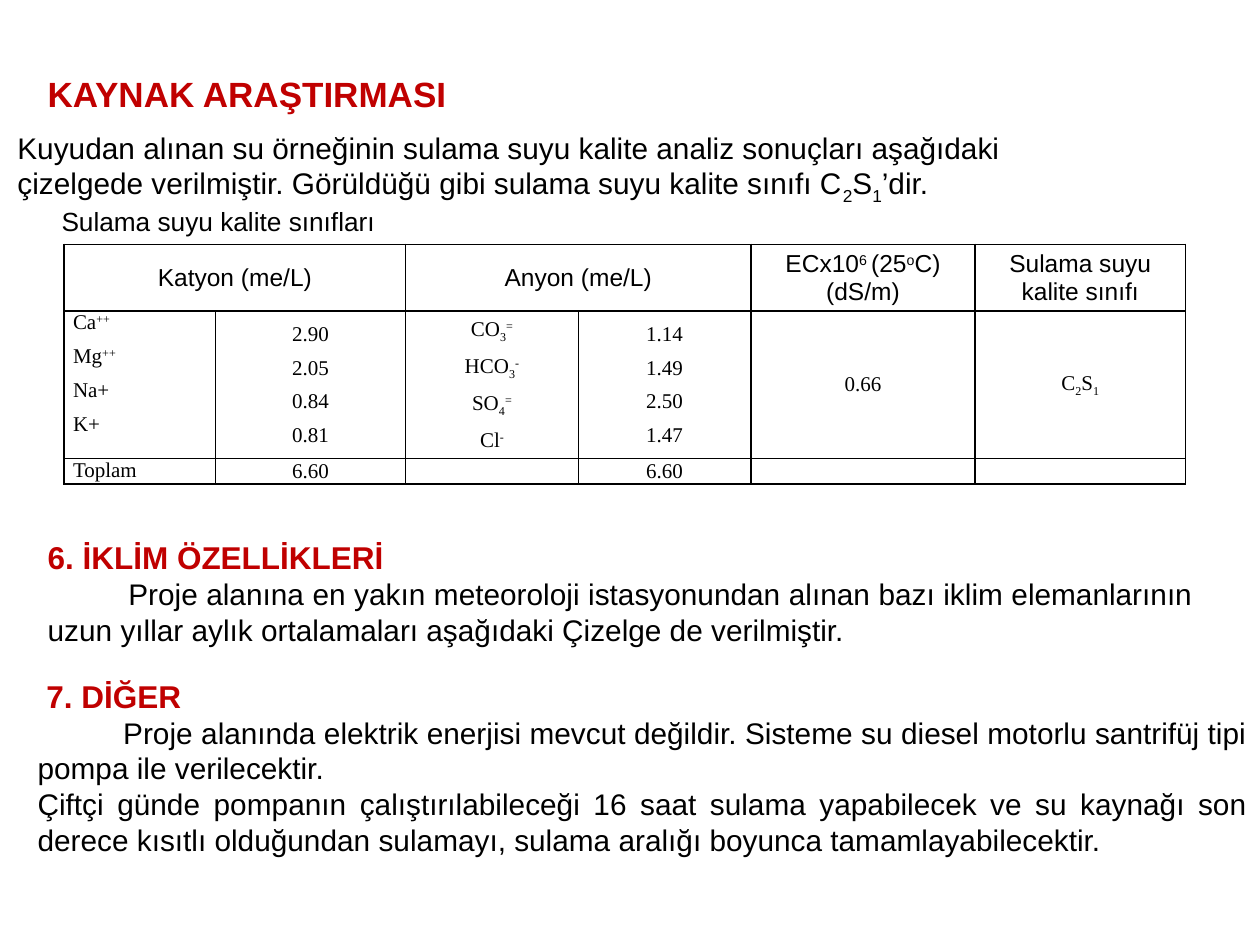
from lxml import etree
from pptx import Presentation
from pptx.dml.color import RGBColor
from pptx.enum.text import MSO_ANCHOR, PP_ALIGN
from pptx.oxml.ns import qn
from pptx.util import Inches, Pt

LEFT, CENTER, JUSTIFY = PP_ALIGN.LEFT, PP_ALIGN.CENTER, PP_ALIGN.JUSTIFY
TOP, MIDDLE = MSO_ANCHOR.TOP, MSO_ANCHOR.MIDDLE
COLORS = {"heading": "C00000", "ink": "000000"}
SANS, SERIF = "Arial", "Times New Roman"
SLIDE_WIDTH, SLIDE_HEIGHT = Inches(10), Inches(7.5)
COLUMN, ROW = SLIDE_WIDTH / 100, SLIDE_HEIGHT / 75
SHIFTS = {"^": "30000", "_": "-25000"}

COLUMN_WIDTHS = [12, 15.1, 13.7, 13.7, 17.8, 16.7]
ROW_HEIGHTS = [5.3, 11.7, 2]
HEADERS = {0: "Katyon (me/L)", 2: "Anyon (me/L)",
           4: "ECx10|^6 |(25|^o|C) (dS/m)", 5: "Sulama suyu kalite sınıfı"}
BODY = [
    [["Ca|^++", "Mg|^++", "Na+", "K+"],
     ["2.90", "2.05", "0.84", "0.81"],
     ["CO|_3|^=", "HCO|_3|^-", "SO|_4|^=", "Cl|^-"],
     ["1.14", "1.49", "2.50", "1.47"],
     ["0.66"],
     ["C|_2|S|_1"]],
    [["Toplam"], ["6.60"], [], ["6.60"], [], []],
]


def write(para, text, size, font=SANS, color="ink", bold=False,
          align=LEFT, before=0, indent=0):
    """Fill a paragraph; bars split spans, a leading ^ or _ raises or lowers one."""
    para.alignment = align
    para.space_before = Pt(before)
    if indent:
        para._p.get_or_add_pPr().set("indent", str(int(indent * COLUMN)))
    for part in text.split("|"):
        span = para.add_run()
        shift = SHIFTS.get(part[0])
        span.text = part[1:] if shift else part
        span.font.size = Pt(size)
        span.font.name = font
        span.font.bold = bold
        span.font.color.rgb = RGBColor.from_string(COLORS[color])
        if shift:
            span.font._element.set("baseline", shift)


def add_paragraph(frame, text, **style):
    """Write into the empty first paragraph of a frame, or into a new one."""
    para = frame.paragraphs[0]
    if para.runs:
        para = frame.add_paragraph()
    write(para, text, **style)
    return para


def add_box(page, left, top, width, height, anchor=TOP):
    """Add a wrapping text box on the grid and return its text frame."""
    box = page.shapes.add_textbox(int(left * COLUMN), int(top * ROW),
                                  int(width * COLUMN), int(height * ROW))
    box.text_frame.word_wrap = True
    box.text_frame.vertical_anchor = anchor
    return box.text_frame


def add_title(page, *area):
    """Place the slide heading."""
    frame = add_box(page, *area, anchor=MIDDLE)
    add_paragraph(frame, "KAYNAK ARAŞTIRMASI", size=20, color="heading",
                  bold=True, align=JUSTIFY)


def add_introduction(page, *area):
    """Place the water analysis text and the table caption."""
    frame = add_box(page, *area, anchor=MIDDLE)
    add_paragraph(frame, "Kuyudan alınan su örneğinin sulama suyu kalite analiz "
                  "sonuçları aşağıdaki çizelgede verilmiştir. Görüldüğü gibi "
                  "sulama suyu kalite sınıfı C|_2|S|_1|’dir.", size=17)
    add_paragraph(frame, "Sulama suyu kalite sınıfları", size=15, indent=3.5)


def add_section(page, heading, paragraphs, *area, heading_indent=0):
    """Place a numbered heading and its (text, indent) paragraphs."""
    frame = add_box(page, *area)
    add_paragraph(frame, heading, size=18, color="heading", bold=True,
                  align=JUSTIFY, indent=heading_indent)
    for text, indent in paragraphs:
        add_paragraph(frame, text, size=17, align=JUSTIFY, indent=indent)


def style_cell(cell, anchor):
    """Give a cell thin black borders, no fill and tight margins."""
    cell.margin_left = cell.margin_right = Inches(0.07)
    cell.margin_top = cell.margin_bottom = 0
    cell.vertical_anchor = anchor
    cell.fill.background()
    properties = cell._tc.get_or_add_tcPr()
    for index, side in enumerate(("lnL", "lnR", "lnT", "lnB")):
        line = etree.Element(qn(f"a:{side}"), w=str(Pt(1)))
        fill = etree.SubElement(line, qn("a:solidFill"))
        etree.SubElement(fill, qn("a:srgbClr"), val=COLORS["ink"])
        properties.insert(index, line)


def add_quality_table(page, left, top):
    """Place the water quality table at a grid position."""
    table = page.shapes.add_table(
        len(ROW_HEIGHTS), len(COLUMN_WIDTHS), int(left * COLUMN), int(top * ROW),
        int(sum(COLUMN_WIDTHS) * COLUMN), int(sum(ROW_HEIGHTS) * ROW)).table
    table.first_row = table.horz_banding = False
    for column, width in zip(table.columns, COLUMN_WIDTHS):
        column.width = int(width * COLUMN)
    for row, height in zip(table.rows, ROW_HEIGHTS):
        row.height = int(height * ROW)
    for first in (0, 2):
        table.cell(0, first).merge(table.cell(0, first + 1))
    for column in range(len(COLUMN_WIDTHS)):
        style_cell(table.cell(0, column), MIDDLE)
        if column in HEADERS:
            add_paragraph(table.cell(0, column).text_frame, HEADERS[column],
                          size=14, align=CENTER)
    for row, entries in enumerate(BODY, start=1):
        for column, lines in enumerate(entries):
            cell = table.cell(row, column)
            style_cell(cell, MIDDLE if column else TOP)
            for index, text in enumerate(lines):
                add_paragraph(cell.text_frame, text, size=12, font=SERIF,
                              align=CENTER if column else JUSTIFY,
                              before=6 if index else 0)
            if not lines:
                end = etree.SubElement(cell.text_frame.paragraphs[0]._p,
                                       qn("a:endParaRPr"))
                end.set("sz", "1200")


def main():
    """Build the slide and save the deck."""
    deck = Presentation()
    deck.slide_width, deck.slide_height = SLIDE_WIDTH, SLIDE_HEIGHT
    page = deck.slides.add_slide(deck.slide_layouts[6])
    add_title(page, 2.8, 5.2, 97.2, 4.4)
    add_quality_table(page, 5.1, 19.4)
    add_introduction(page, 0.4, 9.9, 89, 9.3)
    add_section(page, "6. İKLİM ÖZELLİKLERİ", [
        ("Proje alanına en yakın meteoroloji istasyonundan alınan bazı iklim "
         "elemanlarının uzun yıllar aylık ortalamaları aşağıdaki Çizelge de "
         "verilmiştir.", 6.4),
    ], 2.8, 42.2, 92.9, 10.1)
    add_section(page, "7. DİĞER", [
        ("Proje alanında elektrik enerjisi mevcut değildir. Sisteme su diesel "
         "motorlu santrifüj tipi pompa ile verilecektir.", 6.8),
        ("Çiftçi günde pompanın çalıştırılabileceği 16 saat sulama yapabilecek "
         "ve su kaynağı son derece kısıtlı olduğundan sulamayı, sulama aralığı "
         "boyunca tamamlayabilecektir.", 0),
    ], 2, 53.2, 98, 21.8, heading_indent=0.7)
    deck.save("out.pptx")


if __name__ == "__main__":
    main()
